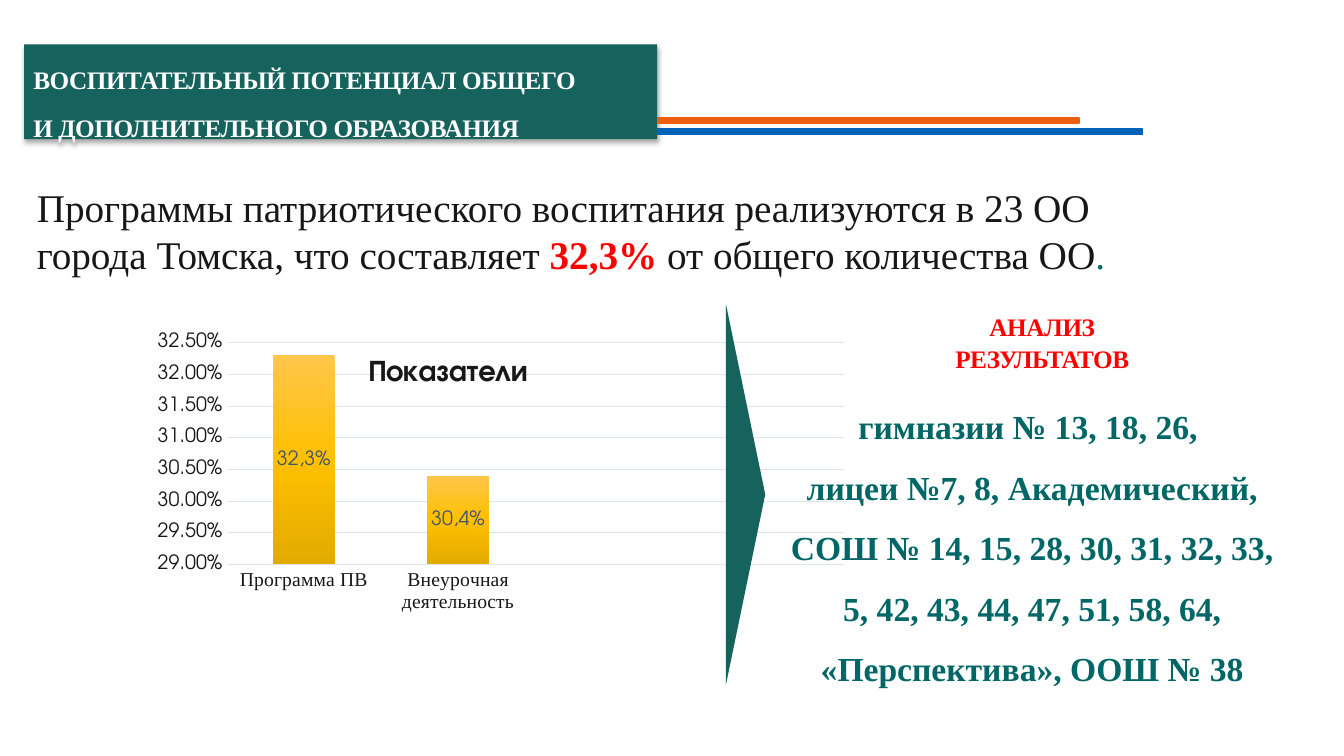
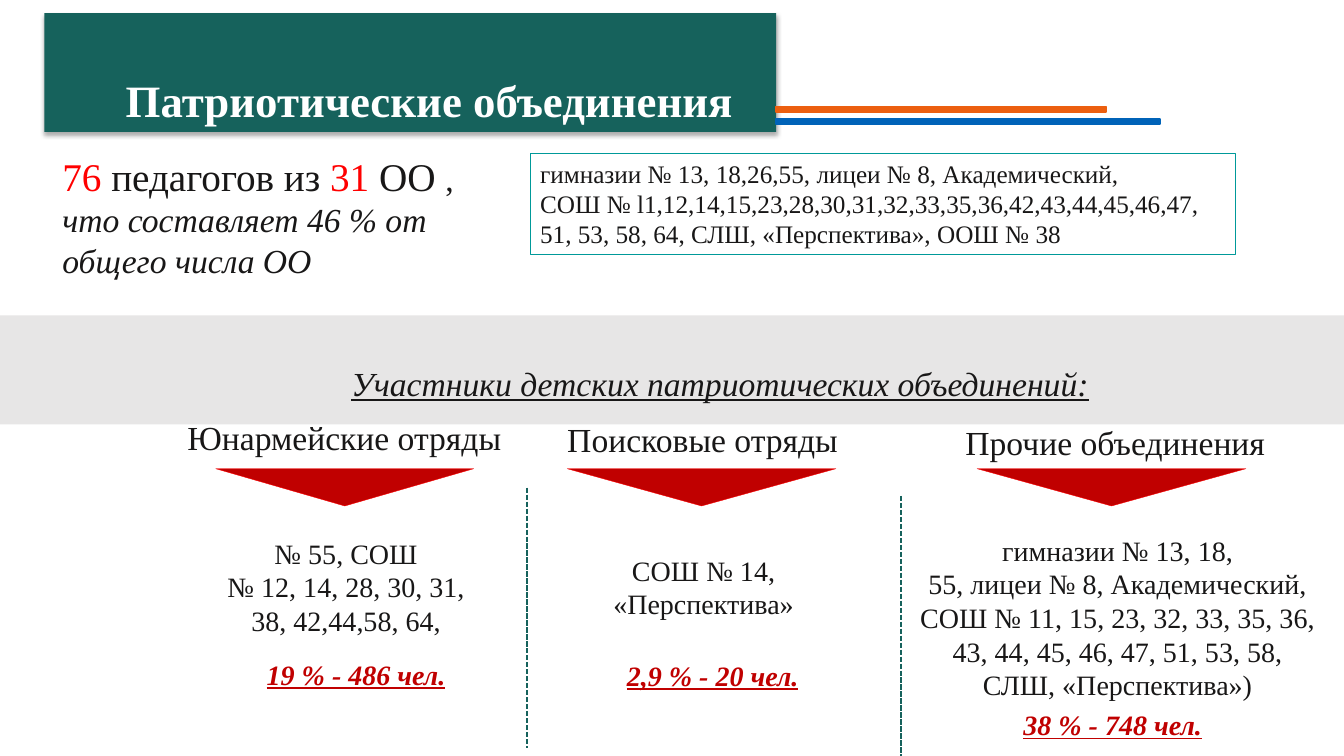
from copy import deepcopy

from lxml import etree
from pptx import Presentation
from pptx import util as u
from pptx.chart.data import CategoryChartData
from pptx.dml.color import RGBColor
from pptx.enum import chart as charts, dml, shapes, text
from pptx.oxml import parse_xml
from pptx.oxml.ns import nsdecls, qn

GREEN = RGBColor(0x16, 0x62, 0x5C)
TEAL = RGBColor(0x00, 0x66, 0x66)
FRAME = RGBColor(0x00, 0x99, 0x99)
ORANGE = RGBColor(0xEC, 0x5F, 0x0F)
BLUE = RGBColor(0x00, 0x63, 0xB8)
INK = RGBColor(0x18, 0x17, 0x17)
SLATE = RGBColor(0x44, 0x54, 0x6A)
RED = RGBColor(0xFF, 0x00, 0x00)
DARK_RED = RGBColor(0xC0, 0x00, 0x00)
GREY = RGBColor(0xE7, 0xE6, 0xE6)
GRID = RGBColor(0xE0, 0xE5, 0xEB)
WHITE = RGBColor(0xFF, 0xFF, 0xFF)
BAR_STOPS = [(0, RGBColor(0xFF, 0xC6, 0x4B)), (0.5, RGBColor(0xFF, 0xC0, 0x00)),
             (1, RGBColor(0xE3, 0xAB, 0x00))]
SERIF = "Times New Roman"
SANS = "TeX Gyre Adventor"
CENTER = text.PP_ALIGN.CENTER
RECTANGLE = shapes.MSO_SHAPE.RECTANGLE
TRIANGLE = shapes.MSO_SHAPE.ISOSCELES_TRIANGLE

presentation = Presentation()
presentation.slide_width = u.Inches(13.33)
presentation.slide_height = u.Inches(7.5)
# The grid has 100 columns and 100 rows
COLUMN = presentation.slide_width / 100
ROW = presentation.slide_height / 100


def box(left, top, width, height):
    """Turn columns and rows into lengths."""
    return [round(n * unit) for n, unit in zip((left, top, width, height), (COLUMN, ROW) * 2)]


def write(frame, paragraphs, align=None, line_spacing=None, space_before=None, tracking=None, **base):
    """Fill a frame; a paragraph is a string or a list of (string, format) runs."""
    frame.word_wrap = True
    for index, content in enumerate(paragraphs):
        paragraph = frame.paragraphs[0] if index == 0 else frame.add_paragraph()
        if align is not None:
            paragraph.alignment = align
        if line_spacing:
            paragraph.line_spacing = line_spacing
        if space_before and index:
            paragraph.space_before = u.Pt(space_before)
        for words, own in [(content, {})] if isinstance(content, str) else content:
            run = paragraph.add_run()
            run.text = words
            style = {"size": 24, "color": INK, "name": SERIF, **base, **own}
            run.font.size = u.Pt(style.pop("size"))
            run.font.color.rgb = style.pop("color")
            for key, value in style.items():
                setattr(run.font, key, value)
            if tracking:
                run.font._element.set("spc", str(tracking))


# Shared header: title band with a shadow and two stripes on its right
headers = [
    dict(lines=["ВОСПИТАТЕЛЬНЫЙ ПОТЕНЦИАЛ ОБЩЕГО", "И ДОПОЛНИТЕЛЬНОГО ОБРАЗОВАНИЯ"],
         band=(1.8, 5.87, 47.1, 12.53), margin=0.09, anchor=text.MSO_ANCHOR.TOP,
         style=dict(size=18, align=text.PP_ALIGN.LEFT, line_spacing=1.5, space_before=2, tracking=-30),
         stripes=[(15.6, 80.3, ORANGE), (17.07, 85, BLUE)]),
    dict(lines=["Патриотические объединения"],
         band=(3.3, 1.73, 54.45, 15.73), margin=0.48, anchor=text.MSO_ANCHOR.BOTTOM,
         style=dict(size=32, align=CENTER),
         stripes=[(14.13, 82.3, ORANGE), (15.73, 86.3, BLUE)]),
]
slides = []
for header in headers:
    slide = presentation.slides.add_slide(presentation.slide_layouts[5])
    slides.append(slide)
    title = slide.shapes.title
    title.left, title.top, title.width, title.height = box(*header["band"])
    title.fill.solid()
    title.fill.fore_color.rgb = GREEN
    title._element.spPr.append(parse_xml(
        f'<a:effectLst {nsdecls("a")}><a:outerShdw blurRad="44450" dist="27940" dir="5400000">'
        '<a:srgbClr val="000000"><a:alpha val="32000"/></a:srgbClr></a:outerShdw></a:effectLst>'))
    frame = title.text_frame
    frame.auto_size = text.MSO_AUTO_SIZE.NONE
    frame.vertical_anchor = header["anchor"]
    frame.margin_left = u.Inches(header["margin"])
    write(frame, header["lines"], color=WHITE, bold=True, **header["style"])
    start = header["band"][0] + header["band"][2]
    for top, end, color in header["stripes"]:
        stripe = slide.shapes.add_shape(RECTANGLE, *box(start, top, end - start, 0.67))
        stripe.shadow.inherit = False
        stripe.fill.solid()
        stripe.fill.fore_color.rgb = color
        stripe.line.color.rgb = color
        stripe.line.width = u.Pt(1)
programs, unions = slides

# Slide 1: introduction
write(programs.shapes.add_textbox(*box(2, 23.6, 83.2, 13.87)).text_frame,
      [[("Программы патриотического воспитания реализуются в 23 ОО города Томска, что составляет ", {}),
        ("32,3% ", dict(color=RED, bold=True)), ("от общего количества ОО", {}),
        (".", dict(color=TEAL))]], size=28)

# Slide 1: column chart, with two empty places on the right
data = CategoryChartData(number_format="0.00%")
data.categories = ["Программа ПВ", "Внеурочная деятельность", "", ""]
data.add_series("Показатели", [0.323, 0.304, None, None])
chart = programs.shapes.add_chart(
    charts.XL_CHART_TYPE.COLUMN_STACKED, *box(0, 43.73, 67.5, 53.33), data).chart
chart.has_legend = False
chart.font.name = SANS
chart.font.size = u.Pt(14)
chart.has_title = True
write(chart.chart_title.text_frame, ["Показатели"], size=21.3, name=SANS, bold=True)

plot = chart.plots[0]
plot.gap_width = 150
plot.overlap = 100
plot.vary_by_categories = False
series = plot.series[0]
fill = series.format.fill
fill.gradient()
fill.gradient_angle = 270
first_stop = fill.gradient_stops[0]._gs
first_stop.addnext(deepcopy(first_stop))
for stop, (position, color) in zip(fill.gradient_stops, BAR_STOPS):
    stop.position = position
    stop.color.rgb = color
for index, words in enumerate(["32,3%", "30,4%"]):
    label = series.points[index].data_label
    write(label.text_frame, [words], size=14, color=SLATE, name=SANS)
    label.position = charts.XL_LABEL_POSITION.CENTER

value_axis, category_axis = chart.value_axis, chart.category_axis
for axis, font_name in [(value_axis, SANS), (category_axis, SERIF)]:
    axis.major_tick_mark = charts.XL_TICK_MARK.NONE
    axis.tick_labels.font.name = font_name
    axis.tick_labels.font.size = u.Pt(14)
    axis.tick_labels.font.color.rgb = INK
value_axis.minimum_scale, value_axis.maximum_scale = 0.29, 0.325
value_axis.major_unit = 0.005
value_axis.tick_labels.number_format = "0.00%"
value_axis.tick_labels.number_format_is_linked = False
value_axis.format.line.fill.background()
for line in (value_axis.major_gridlines.format.line, category_axis.format.line):
    line.color.rgb = GRID
    line.width = u.Pt(0.75)

# Fixed places of the plot area and the chart title, as shares of the chart
plot_area = chart._chartSpace.chart.plotArea
for parent, index, places in [
        (plot_area, 0, dict(layoutTarget="inner", xMode="edge", yMode="edge",
                            x=0.25, y=0.03, w=0.68, h=0.55)),
        (chart.chart_title._element, 1, dict(xMode="edge", yMode="edge", x=0.4, y=0.05))]:
    for old in parent.findall(qn("c:layout")):
        parent.remove(old)
    layout = parse_xml(f'<c:layout {nsdecls("c")}><c:manualLayout/></c:layout>')
    for key, value in places.items():
        etree.SubElement(layout[0], qn("c:" + key)).set("val", str(value))
    parent.insert(index, layout)

# Slide 1: pointer and results
pointer = programs.shapes.add_shape(TRIANGLE, *box(41.3, 62.8, 28.35, 5.2))
pointer.rotation = 90
pointer.shadow.inherit = False
pointer.fill.solid()
pointer.fill.fore_color.rgb = GREEN
pointer.line.fill.background()
write(programs.shapes.add_textbox(*box(58.4, 40.27, 38.3, 9.73)).text_frame,
      ["АНАЛИЗ", "РЕЗУЛЬТАТОВ"],
      size=18, color=RED, bold=True, align=CENTER, line_spacing=1.07, tracking=-30)
write(programs.shapes.add_textbox(*box(57, 50.4, 39.6, 49.6)).text_frame,
      ["гимназии № 13, 18, 26, ",
       "лицеи №7, 8, Академический, СОШ № 14, 15, 28, 30, 31, 32, 33, 5, 42, 43, 44, 47, 51, 58, 64, "
       "«Перспектива», ООШ № 38"],
      color=TEAL, bold=True, align=CENTER, line_spacing=1.5)

# Slide 2: teachers and their schools
write(unions.shapes.add_textbox(*box(3.9, 19.47, 33.1, 18.4)).text_frame,
      [[("76 ", dict(color=RED)), ("педагогов из", {}), (" 31 ", dict(color=RED)),
        ("ОО ", {}), (",", dict(size=24))],
       [("что составляет 46 % от общего числа ОО", dict(size=24, italic=True))]], size=28)
school_list = unions.shapes.add_shape(RECTANGLE, *box(39.45, 20.27, 52.5, 13.47))
school_list.shadow.inherit = False
school_list.fill.background()
school_list.line.color.rgb = FRAME
school_list.line.width = u.Pt(0.75)
school_list.text_frame.vertical_anchor = text.MSO_ANCHOR.TOP
write(school_list.text_frame,
      ["гимназии № 13, 18,26,55, лицеи № 8, Академический,",
       "СОШ № l1,12,14,15,23,28,30,31,32,33,35,36,42,43,44,45,46,47, 51, 53, 58, 64, СЛШ, "
       "«Перспектива», ООШ № 38"], size=18, align=text.PP_ALIGN.LEFT)

# Slide 2: grey band with its heading
band = unions.shapes.add_shape(RECTANGLE, *box(0, 41.73, 100, 14.4))
band.shadow.inherit = False
band.fill.solid()
band.fill.fore_color.rgb = GREY
band.line.fill.background()
write(unions.shapes.add_textbox(*box(25.4, 47.33, 59.3, 6.67)).text_frame,
      ["Участники детских патриотических объединений:"], italic=True, underline=True)

# Slide 2: three kinds of union; each has a name, a marker, schools and a share
kinds = [
    ("Юнармейские отряды", (13.1, 54.53, 25.05, 6.67), (16.05, 19.2),
     ["№ 55, СОШ", "№ 12, 14, 28, 30, 31, 38, 42,44,58, 64,"], (15.15, 70.27, 21.2, 14.8),
     "19 % - 486 чел.", (19.1, 86.27, 16.1, 5.87)),
    ("Поисковые отряды", (40.65, 54.8, 23.25, 6.67), (42.2, 20),
     ["СОШ № 14, «Перспектива»"], (43.9, 72.53, 16.9, 10.27),
     "2,9 % - 20 чел.", (45.9, 86.4, 14.55, 5.87)),
    ("Прочие объединения", (70, 55.2, 25.95, 6.67), (72.7, 20),
     ["гимназии № 13, 18,",
      "55, лицеи № 8, Академический, СОШ № 11, 15, 23, 32, 33, 35, 36, 43, 44, 45, 46, 47, 51, 53, 58,",
      "СЛШ, «Перспектива»)"], (67.2, 69.87, 31.9, 23.73),
     "38 % - 748 чел.", (75.4, 92.93, 16.1, 5.87)),
]
for name, name_box, (left, width), schools, schools_box, share, share_box in kinds:
    marker = unions.shapes.add_shape(TRIANGLE, *box(left, 62, width, 4.93))
    marker.rotation = 180
    marker.shadow.inherit = False
    marker.fill.solid()
    marker.fill.fore_color.rgb = DARK_RED
    marker.line.color.rgb = RED
    marker.line.width = u.Pt(0.25)
    write(unions.shapes.add_textbox(*box(*name_box)).text_frame, [name], align=CENTER)
    write(unions.shapes.add_textbox(*box(*schools_box)).text_frame, schools, size=20, align=CENTER)
    write(unions.shapes.add_textbox(*box(*share_box)).text_frame, [share],
          size=20, color=DARK_RED, bold=True, italic=True, underline=True)

# Slide 2: dashed dividers
for column, top, bottom in [(39.2, 64.5, 99), (67.05, 65.6, 100)]:
    divider = unions.shapes.add_connector(
        shapes.MSO_CONNECTOR.STRAIGHT, *box(column, top, column, bottom))
    divider.line.color.rgb = GREEN
    divider.line.width = u.Pt(1.25)
    divider.line.dash_style = dml.MSO_LINE.SQUARE_DOT
    etree.SubElement(divider._element.spPr, qn("a:effectLst"))

presentation.save("out.pptx")
